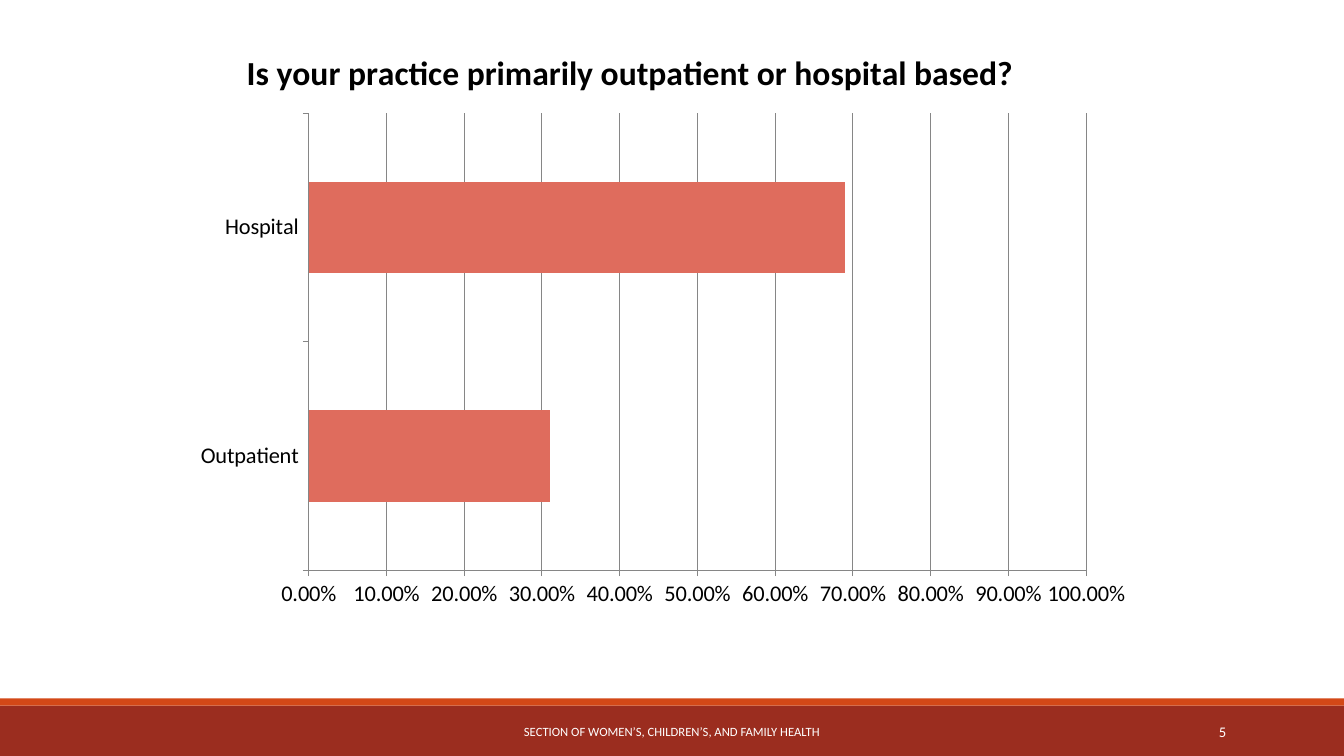
import pptx
import pptx.chart.data
import pptx.dml.color
import pptx.enum.chart
import pptx.enum.shapes
import pptx.enum.text
import pptx.oxml
import pptx.oxml.ns
import pptx.util

Pt = pptx.util.Pt
FONT = "Calibri"
AXIS_GREY = "868686"


def color(hex_string):
    return pptx.dml.color.RGBColor.from_string(hex_string)


def style_font(font, size, hex_string, bold=False):
    font.name = FONT
    font.size = Pt(size)
    font.bold = bold
    font.color.rgb = color(hex_string)


def add_band(page, top, height, fill):
    band = page.shapes.add_shape(
        pptx.enum.shapes.MSO_SHAPE.RECTANGLE, 0, Pt(top), Pt(960), Pt(height))
    band.shadow.inherit = False
    band.fill.solid()
    band.fill.fore_color.rgb = color(fill)
    band.line.fill.background()


def add_footer_text(page, left, width, text, size, align):
    box = page.shapes.add_textbox(Pt(left), Pt(508.4), Pt(width), Pt(28.8))
    frame = box.text_frame
    frame.word_wrap = True
    frame.vertical_anchor = pptx.enum.text.MSO_ANCHOR.MIDDLE
    frame.text = text
    para = frame.paragraphs[0]
    para.alignment = align
    style_font(para.runs[0].font, size, "FFFFFF")


def set_layout(parent, position, **fractions):
    """Place a chart part by fractions of the chart's size."""
    qn = pptx.oxml.ns.qn
    for old in parent.findall(qn("c:layout")):
        parent.remove(old)
    values = {"xMode": "edge", "yMode": "edge", **fractions}
    items = "".join(f'<c:{name} val="{value}"/>' for name, value in values.items())
    parent.insert(position, pptx.oxml.parse_xml(
        f'<c:layout {pptx.oxml.ns.nsdecls("c")}>'
        f"<c:manualLayout>{items}</c:manualLayout></c:layout>"))


def style_axis(axis):
    axis.major_tick_mark = pptx.enum.chart.XL_TICK_MARK.OUTSIDE
    axis.minor_tick_mark = pptx.enum.chart.XL_TICK_MARK.NONE
    style_font(axis.tick_labels.font, 16, "000000")
    style_line(axis.format.line)


def style_line(line):
    line.width = Pt(0.75)
    line.color.rgb = color(AXIS_GREY)


def add_practice_chart(page):
    data = pptx.chart.data.CategoryChartData(number_format="0.00%")
    data.categories = ["Outpatient", "Hospital"]
    data.add_series("Series 1", [0.31, 0.69])
    chart = page.shapes.add_chart(
        pptx.enum.chart.XL_CHART_TYPE.BAR_CLUSTERED,
        Pt(62.6), Pt(23), Pt(840.2), Pt(427), data).chart
    style_font(chart.font, 10, "000000")
    chart.has_legend = False

    chart.has_title = True
    title = chart.chart_title
    title.include_in_layout = False
    title.text_frame.text = "Is your practice primarily outpatient or hospital based?"
    span = title.text_frame.paragraphs[0].runs[0]
    style_font(span.font, 24, "000000", bold=True)
    set_layout(title._element, 1, x=0.13, y=0.02)
    set_layout(chart._chartSpace.chart.plotArea, 0, x=0.188, y=0.136, w=0.661, h=0.764)
    target = pptx.oxml.parse_xml(
        f'<c:layoutTarget {pptx.oxml.ns.nsdecls("c")} val="inner"/>')
    chart._chartSpace.chart.plotArea[0][0].insert(0, target)

    plot = chart.plots[0]
    plot.gap_width = 150
    plot.vary_by_categories = False
    bars = plot.series[0].format
    bars.fill.solid()
    bars.fill.fore_color.rgb = color("DF6C5D")

    style_axis(chart.category_axis)
    percent_axis = chart.value_axis
    style_axis(percent_axis)
    percent_axis.minimum_scale = 0
    percent_axis.maximum_scale = 1
    percent_axis.major_unit = 0.1
    percent_axis.tick_labels.number_format = "0.00%"
    percent_axis.tick_labels.number_format_is_linked = False
    percent_axis.has_major_gridlines = True
    style_line(percent_axis.major_gridlines.format.line)


def main():
    deck = pptx.Presentation()
    deck.slide_width, deck.slide_height = Pt(960), Pt(540)
    page = deck.slides.add_slide(deck.slide_layouts[6])
    align = pptx.enum.text.PP_ALIGN
    add_band(page, 504, 36, "9B2D1F")
    add_band(page, 498.8, 5.2, "D34817")
    add_footer_text(page, 780, 103, "5", 10.5, align.RIGHT)
    add_footer_text(page, 290, 379.6,
                    "SECTION OF WOMEN’S, CHILDREN’S, AND FAMILY HEALTH", 9, align.CENTER)
    add_practice_chart(page)
    deck.save("out.pptx")


if __name__ == "__main__":
    main()
